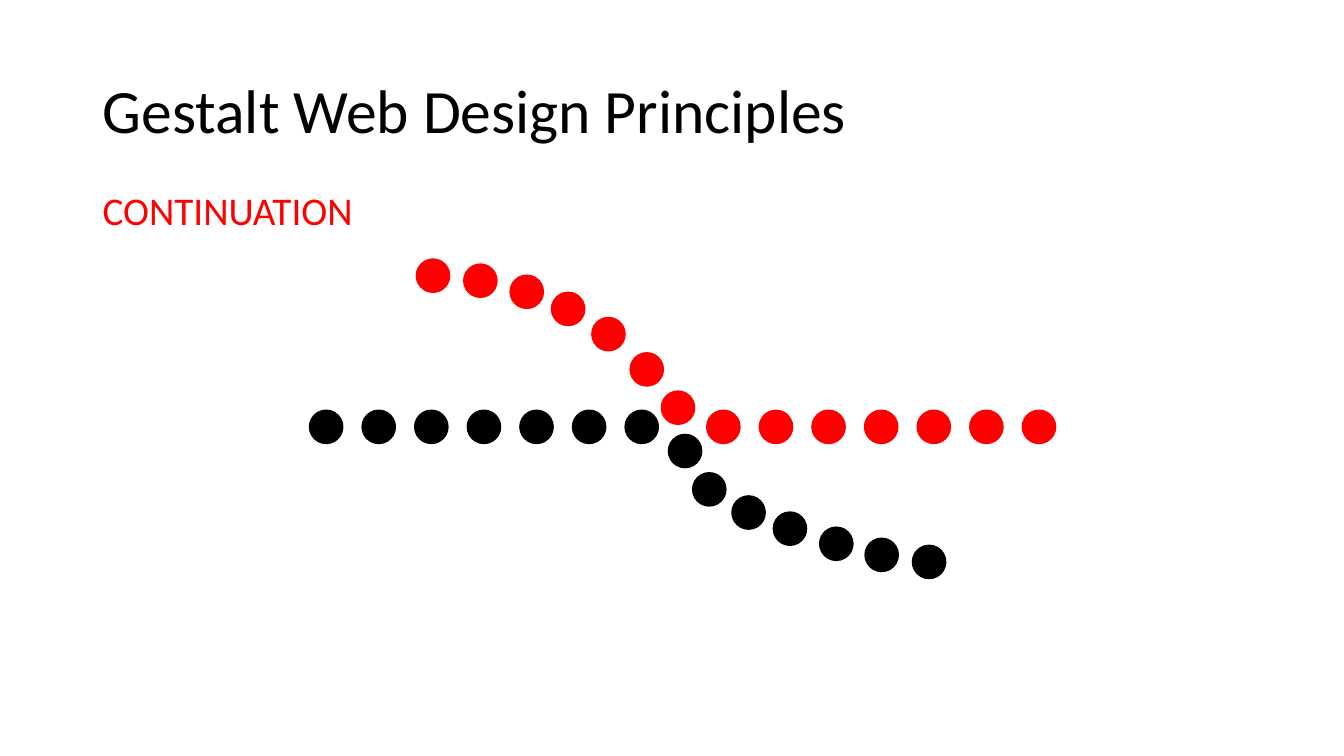
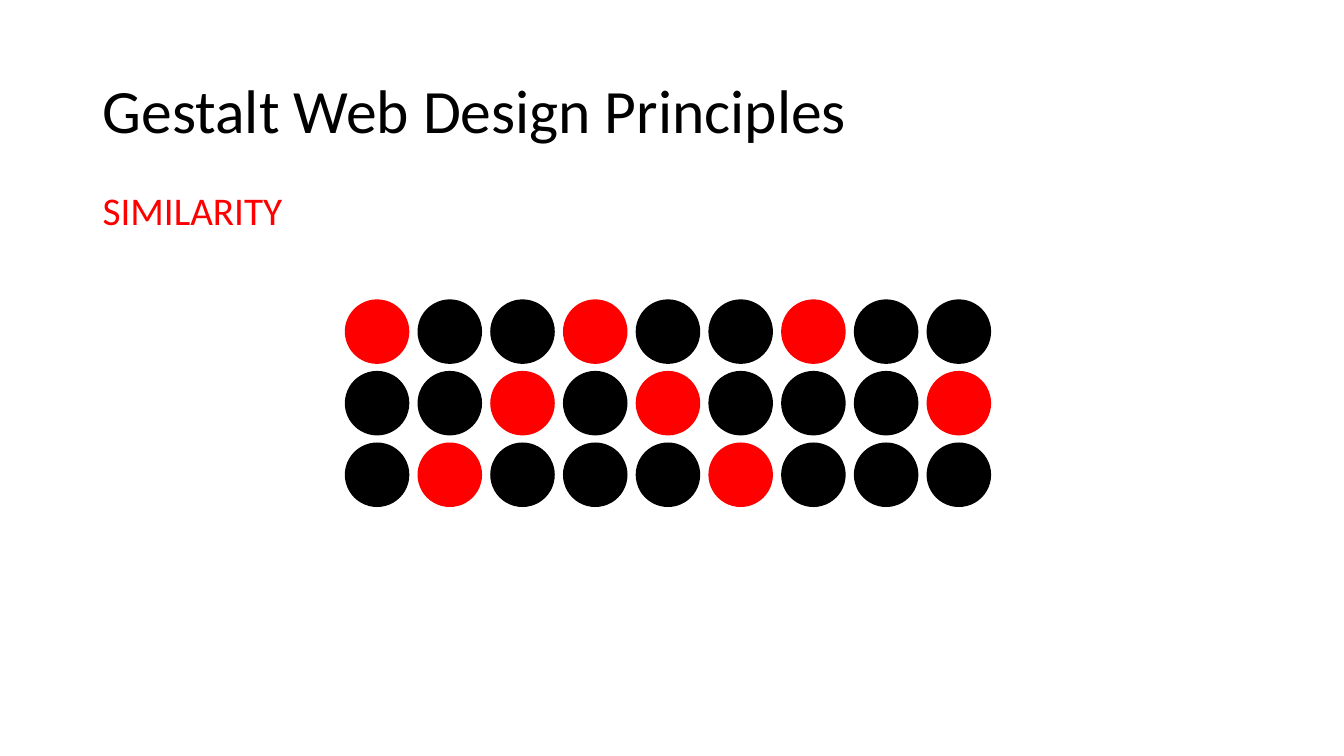
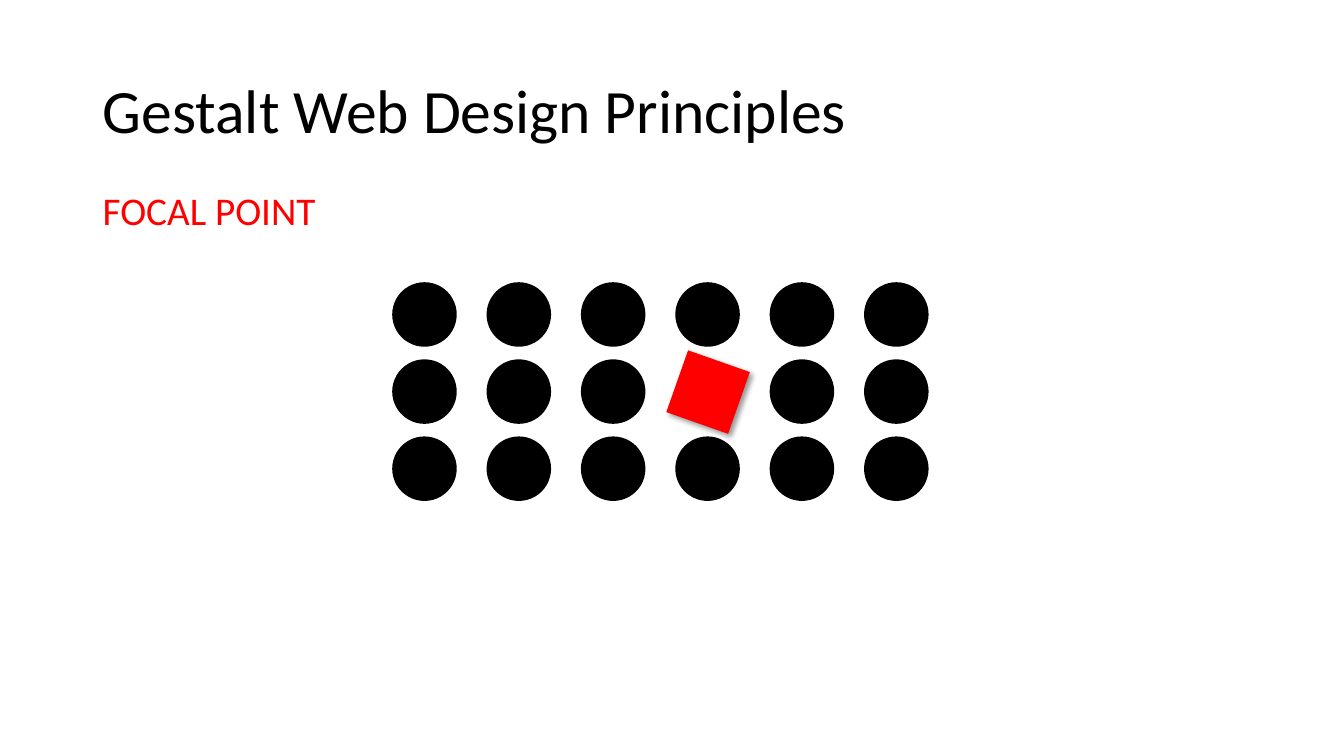
from lxml import etree
from pptx import Presentation
from pptx.dml.color import RGBColor
from pptx.enum.shapes import MSO_SHAPE
from pptx.enum.text import MSO_ANCHOR
from pptx.oxml.ns import qn
from pptx.util import Pt

PX = 9144  # EMU; 100 px to the inch
OVAL, RECT = MSO_SHAPE.OVAL, MSO_SHAPE.RECTANGLE
TOP, MIDDLE = MSO_ANCHOR.TOP, MSO_ANCHOR.MIDDLE
FONT, BLACK, RED = "Calibri", "000000", "FF0000"

TITLE = "Gestalt Web Design Principles"

# Continuation: two level rows (first left, last left) and two curves
SMALL_DOT = 33
ROW_TOP, ROW_COUNT = 407, 7
LEVEL_ROWS = [(307, 620, BLACK), (701, 1014, RED)]
CURVES = [
    (RED, [(413, 257), (460, 262), (506, 273), (547, 290),
           (587, 315), (625, 350), (656, 388)]),
    (BLACK, [(663, 431), (687, 469), (726, 492), (767, 508),
             (813, 523), (858, 534), (905, 541)]),
]

# Grids: "o" black dot, "R" red dot, "S" focal square
BIG_DOT = 64
SIMILARITY = ["RooRooRoo",
              "ooRoRoooR",
              "oRoooRooo"]
SIMILARITY_AREA = (342, 919, 297, 439)  # first and last left, first and last top
FOCAL_POINT = ["oooooo",
               "oooSoo",
               "oooooo"]
FOCAL_AREA = (389, 857, 280, 433)
FOCAL_SIZE, FOCAL_ANGLE = 65, 19.4


def rgb(color):
    return RGBColor.from_string(color)


def px(*lengths):
    return [round(length * PX) for length in lengths]


def spread(first, last, count):
    """Evenly spaced positions, both ends included."""
    return [first + (last - first) * i / (count - 1) for i in range(count)]


def add_text(slide, text, box, size, color=BLACK, anchor=TOP):
    frame = slide.shapes.add_textbox(*px(*box)).text_frame
    frame.word_wrap = True
    frame.vertical_anchor = anchor
    paragraph = frame.paragraphs[0]
    paragraph.text = text
    paragraph.line_spacing = 0.9
    font = paragraph.font
    font.name, font.size, font.color.rgb = FONT, Pt(size), rgb(color)


def add_mark(shapes, left, top, size, color, kind=OVAL, outline=False):
    mark = shapes.add_shape(kind, *px(left, top, size, size))
    mark.shadow.inherit = False
    mark.fill.solid()
    mark.fill.fore_color.rgb = rgb(color)
    if outline:
        mark.line.color.rgb = rgb(color)
        mark.line.width = Pt(1)
    else:
        mark.line.fill.background()
    return mark


def add_drop_shadow(mark, color=BLACK, alpha=40, blur=4, distance=3, angle=45):
    effects = mark.element.spPr.find(qn("a:effectLst"))
    shadow = etree.SubElement(
        effects, qn("a:outerShdw"), blurRad=str(Pt(blur)), dist=str(Pt(distance)),
        dir=str(angle * 60000), algn="tl", rotWithShape="0")
    tint = etree.SubElement(shadow, qn("a:srgbClr"), val=color)
    etree.SubElement(tint, qn("a:alpha"), val=str(alpha * 1000))


def add_focal_square(shapes, left, top):
    square = add_mark(shapes, left, top, FOCAL_SIZE, RED, kind=RECT)
    square.rotation = FOCAL_ANGLE
    add_drop_shadow(square)


def add_grid(shapes, rows, area):
    first_left, last_left, first_top, last_top = area
    for top, row in zip(spread(first_top, last_top, len(rows)), rows):
        for left, code in zip(spread(first_left, last_left, len(row)), row):
            if code == "S":
                add_focal_square(shapes, left, top)
            else:
                add_mark(shapes, left, top, BIG_DOT, RED if code == "R" else BLACK)


def draw_continuation(slide):
    rows = [(color, [(left, ROW_TOP) for left in spread(first, last, ROW_COUNT)])
            for first, last, color in LEVEL_ROWS]
    for color, points in rows + CURVES:
        for left, top in points:
            add_mark(slide.shapes, left, top, SMALL_DOT, color, outline=True)


def draw_similarity(slide):
    add_grid(slide.shapes.add_group_shape().shapes, SIMILARITY, SIMILARITY_AREA)


def draw_focal_point(slide):
    add_grid(slide.shapes, FOCAL_POINT, FOCAL_AREA)


PRINCIPLES = [
    ("CONTINUATION", draw_continuation),
    ("SIMILARITY", draw_similarity),
    ("FOCAL POINT", draw_focal_point),
]


def main():
    deck = Presentation()
    deck.slide_width, deck.slide_height = px(1333, 750)
    blank = deck.slide_layouts[6]
    for principle, draw in PRINCIPLES:
        slide = deck.slides.add_slide(blank)
        add_text(slide, TITLE, (92, 40, 1150, 145), 44, anchor=MIDDLE)
        add_text(slide, principle, (92, 185, 747, 461), 28, color=RED)
        draw(slide)
    deck.save("out.pptx")


if __name__ == "__main__":
    main()
